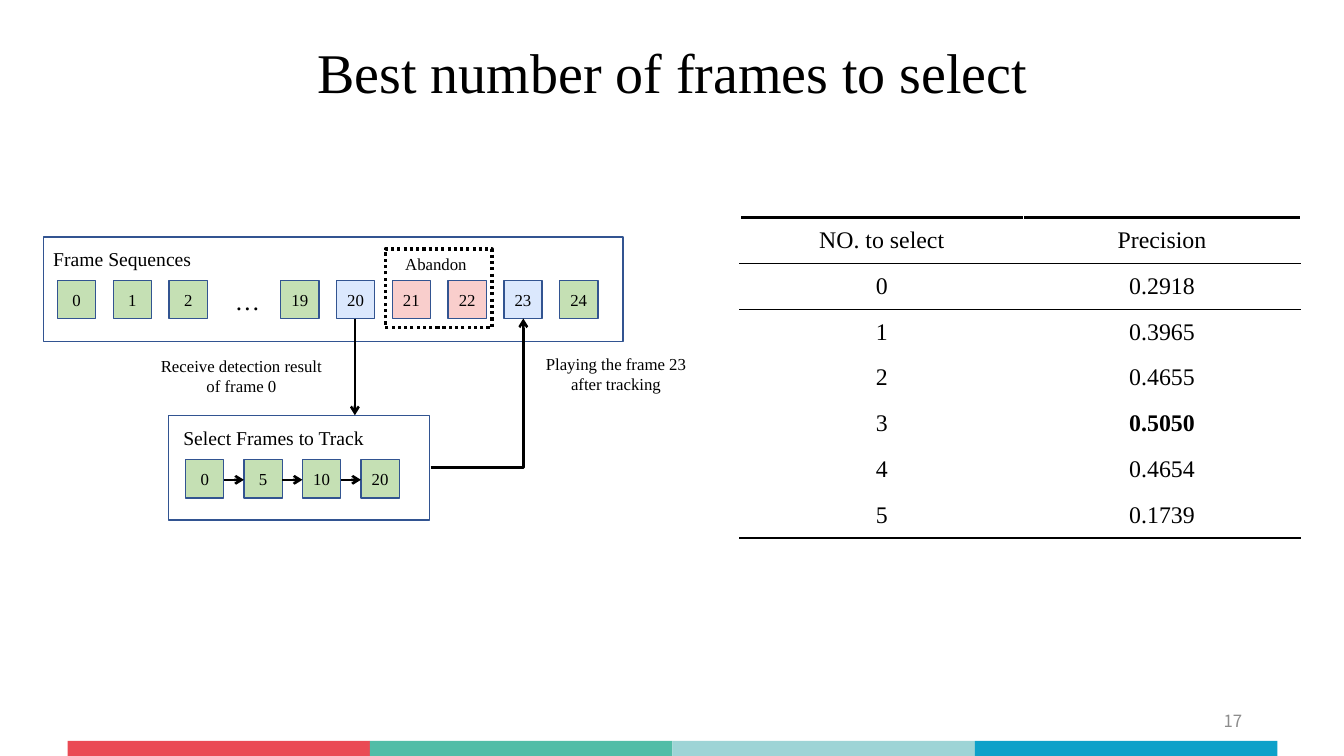
from lxml import etree
from pptx import Presentation, util as u
from pptx.dml.color import RGBColor
from pptx.enum import dml, shapes, text
from pptx.oxml import ns

INK = {
    "black": "000000", "white": "FFFFFF", "grey": "8C8C8C", "edge": "325491",
    "green": "C5E0B4", "blue": "DBE8FD", "pink": "F9CECC",
}
BANDS = ["EA4A54", "52BDA7", "9ED4D6", "0EA1C9"]
SERIF = "Times New Roman"
SIDE = 0.38  # width and height of one frame
LEFT, CENTER, RIGHT = text.PP_ALIGN.LEFT, text.PP_ALIGN.CENTER, text.PP_ALIGN.RIGHT
SCORES = [
    ("NO. to select", "Precision"), ("0", "0.2918"), ("1", "0.3965"),
    ("2", "0.4655"), ("3", "0.5050"), ("4", "0.4654"), ("5", "0.1739"),
]
RULES = {0: 2, 1: 1, 2: 1, 7: 2}  # table row edge: line width


def rgb(name):
    return RGBColor.from_string(INK.get(name, name))


def inches(*sizes):
    return [u.Inches(size) for size in sizes]


def write(frame, words, size, align=CENTER, font=SERIF, ink="black", bold=False):
    """Fill a text frame, one paragraph for each line of words."""
    frame.vertical_anchor = text.MSO_ANCHOR.MIDDLE
    for i, line in enumerate(words.split("\n")):
        para = frame.paragraphs[0] if i == 0 else frame.add_paragraph()
        para.alignment = align
        run = para.add_run()
        run.text = line
        run.font.size = u.Pt(size)
        run.font.name = font
        run.font.bold = bold
        run.font.color.rgb = rgb(ink)


def label(slide, place, words, size, align=LEFT, wrap=False, **look):
    frame = slide.shapes.add_textbox(*inches(*place)).text_frame
    frame.word_wrap = wrap
    if not wrap:
        frame.auto_size = text.MSO_AUTO_SIZE.SHAPE_TO_FIT_TEXT
    write(frame, words, size, align, **look)
    return frame


def box(slide, place, fill=None, line="edge", width=1):
    shape = slide.shapes.add_shape(shapes.MSO_SHAPE.RECTANGLE, *inches(*place))
    shape.shadow.inherit = False
    if fill:
        shape.fill.solid()
        shape.fill.fore_color.rgb = rgb(fill)
    else:
        shape.fill.background()
    if line:
        shape.line.color.rgb = rgb(line)
        shape.line.width = u.Pt(width)
    else:
        shape.line.fill.background()
    return shape


def tile(slide, left, top, number, fill):
    """Draw one numbered video frame."""
    frame = box(slide, (left, top, SIDE, SIDE), fill).text_frame
    frame.margin_left = frame.margin_right = 0
    frame.word_wrap = False
    write(frame, number, 12)


def arrow(slide, start, end, bent=False):
    kind = shapes.MSO_CONNECTOR.ELBOW if bent else shapes.MSO_CONNECTOR.STRAIGHT
    link = slide.shapes.add_connector(kind, *inches(*start, *end))
    link.line.color.rgb = rgb("black")
    link.line.width = u.Pt(1.75)
    props = link._element.spPr
    if bent:
        props.find(ns.qn("a:prstGeom")).set("prst", "bentConnector2")
    etree.SubElement(link.line._get_or_add_ln(), ns.qn("a:tailEnd"), type="arrow")
    etree.SubElement(props, ns.qn("a:effectLst"))


def rule(cell, tag, width):
    """Add a black border to one side of a cell, before its fill."""
    props = cell._tc.get_or_add_tcPr()
    edge = etree.SubElement(props, ns.qn(tag), w=str(u.Pt(width)))
    fill = etree.SubElement(edge, ns.qn("a:solidFill"))
    etree.SubElement(fill, ns.qn("a:srgbClr"), val=INK["black"])


def scores(slide):
    place = inches(7.34, 2.16, 5.56, 3.18)
    table = slide.shapes.add_table(len(SCORES), 2, *place).table
    table.first_row = table.horz_banding = False
    for col, width in zip(table.columns, inches(2.81, 2.75)):
        col.width = width
    for r, row in enumerate(SCORES):
        for c, words in enumerate(row):
            cell = table.cell(r, c)
            for tag, edge in (("a:lnT", r), ("a:lnB", r + 1)):
                if edge in RULES:
                    rule(cell, tag, RULES[edge])
            cell.fill.solid()
            cell.fill.fore_color.rgb = rgb("white")
            cell.margin_left = cell.margin_right = u.Inches(0.12)
            cell.margin_top = cell.margin_bottom = 0
            write(cell.text_frame, words, 17, bold=words == "0.5050")
            cell.vertical_anchor = text.MSO_ANCHOR.MIDDLE


def sequence(slide):
    drop = box(slide, (3.82, 2.47, 1.06, 0.78), line="black", width=2.25)
    drop.line.dash_style = dml.MSO_LINE.ROUND_DOT
    box(slide, (0.43, 2.35, 5.75, 1.04))
    fills = {"20": "blue", "21": "pink", "22": "pink", "23": "blue"}
    numbers = ["0", "1", "2", "…", "19", "20", "21", "22", "23", "24"]
    step = (5.55 - 0.57) / 9
    for i, number in enumerate(numbers):
        if number == "…":
            label(slide, (2.23, 2.78, 0.45, 0.4), number, 18)
        else:
            tile(slide, 0.57 + i * step, 2.78, number, fills.get(number, "green"))
    label(slide, (0.43, 2.4, 1.6, 0.34), "Frame Sequences", 14)
    label(slide, (3.92, 2.47, 0.82, 0.3), "Abandon", 12)


def track(slide):
    box(slide, (1.67, 4.12, 2.59, 1.04))
    label(slide, (1.72, 4.17, 2.06, 0.34), "Select Frames to Track", 14)
    step = 0.58
    for i, number in enumerate(["0", "5", "10", "20"]):
        left = 1.84 + i * step
        tile(slide, left, 4.56, number, "green")
        if i:
            arrow(slide, (left - step + SIDE, 4.76), (left, 4.76))


def flow(slide):
    arrow(slide, (3.52, 3.16), (3.52, 4.12))
    arrow(slide, (4.27, 4.64), (5.19, 3.16), bent=True)
    label(slide, (1.44, 3.48, 1.91, 0.5),
          "Receive detection result\nof frame 0", 12, CENTER)
    label(slide, (5.25, 3.46, 1.72, 0.5),
          "Playing the frame 23\nafter tracking", 12, CENTER)


def main():
    deck = Presentation()
    deck.slide_width, deck.slide_height = inches(13.33, 7.5)
    slide = deck.slides.add_slide(deck.slide_layouts[6])
    for i, band in enumerate(BANDS):
        box(slide, (0.67 + 3 * i, 7.35, 3, 0.15), band, line=None)
    title = label(slide, (0.92, 0.4, 11.5, 0.7),
                  "Best number of frames to select", 40, CENTER, wrap=True)
    title.paragraphs[0].line_spacing = 0.9
    label(slide, (9.42, 6.95, 3, 0.4), "17", 12, RIGHT, wrap=True,
          font="Noto Sans CJK SC", ink="grey")
    scores(slide)
    sequence(slide)
    track(slide)
    flow(slide)
    deck.save("out.pptx")


if __name__ == "__main__":
    main()
